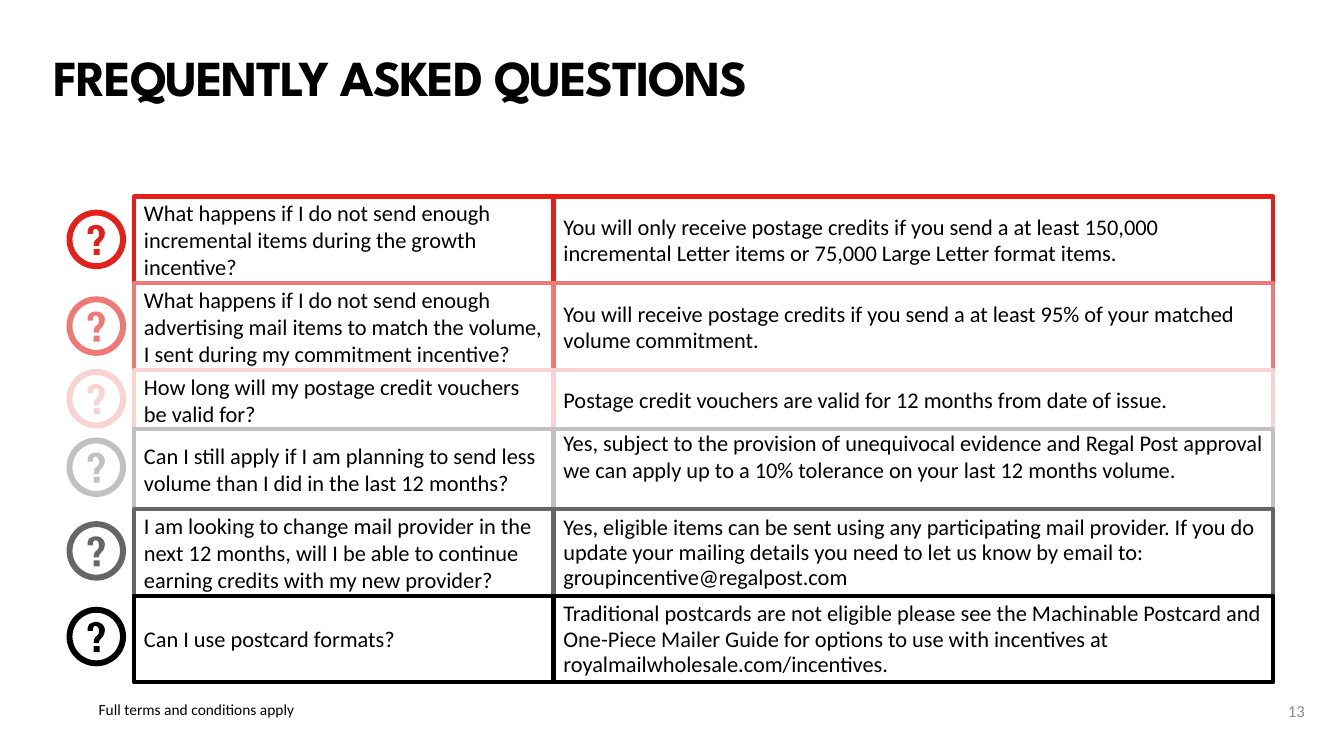
from dataclasses import dataclass

from pptx import Presentation
from pptx.dml.color import RGBColor
from pptx.enum.shapes import MSO_SHAPE as SHAPE
from pptx.enum.text import MSO_ANCHOR as ANCHOR, PP_ALIGN as ALIGN
from pptx.util import Inches, Pt


@dataclass(frozen=True)
class Theme:
    title_font: str = "League Spartan"
    body_font: str = "Calibri"
    title_size: int = 36
    body_size: int = 16
    number_size: int = 12
    footer_size: int = 11
    text: str = "000000"
    number: str = "8C8C8C"
    red: str = "E32019"
    coral: str = "EE7975"
    blush: str = "F9D3D1"
    silver: str = "C1C1C1"
    grey: str = "666666"
    black: str = "000000"


theme = Theme()


def write(sp, text, size, font=theme.body_font, color=theme.text, bold=False,
          spacing=None, align=ALIGN.LEFT, **frame):
    """Fill a shape with one styled paragraph; frame holds text frame settings."""
    tf = sp.text_frame
    for name, value in {"word_wrap": True, **frame}.items():
        setattr(tf, name, value)
    p = tf.paragraphs[0]
    p.alignment = align
    p.line_spacing = spacing
    r = p.add_run()
    r.text = text
    for name, value in {"name": font, "size": Pt(size), "bold": bold}.items():
        setattr(r.font, name, value)
    r.font.color.rgb = RGBColor.from_string(color)
    return r


def curve_points(start, segments, steps=6):
    """Turn cubic segments (two controls and an end) into points."""
    points = []
    for x1, y1, x2, y2, x3, y3 in segments:
        for t in (i / steps for i in range(1, steps + 1)):
            u = 1 - t
            points.append(tuple(
                u**3 * a + 3 * u * u * t * b + 3 * u * t * t * c + t**3 * d
                for a, b, c, d in zip(start, (x1, y1), (x2, y2), (x3, y3))))
        start = (x3, y3)
    return points


prs = Presentation()
prs.slide_width, prs.slide_height = Inches(13.33), Inches(7.5)
s = prs.slides.add_slide(prs.slide_layouts[6])

# Title, page number and footnote
no_margins = dict.fromkeys(
    ("margin_left", "margin_top", "margin_right", "margin_bottom"), 0)
title = s.shapes.add_textbox(Inches(0.53), Inches(0.45), Inches(11.01), Inches(0.52))
r = write(title, "FREQUENTLY ASKED QUESTIONS", theme.title_size, theme.title_font,
          bold=True, spacing=Pt(44), **no_margins)
r.font._element.set("spc", "-100")

number = s.shapes.add_textbox(Inches(12.63), Inches(6.85), Inches(0.41), Inches(0.4))
write(number, "13", theme.number_size, color=theme.number, align=ALIGN.RIGHT,
      vertical_anchor=ANCHOR.MIDDLE)

footnote = s.shapes.add_textbox(Inches(0.88), Inches(6.97), Inches(5.7), Inches(0.15))
write(footnote, "Full terms and conditions apply", theme.footer_size, spacing=0.9,
      margin_top=0, margin_bottom=0)

# Question mark outline, in hundredths of an inch from the icon's corner
hook_start = (27, 36)
inner_hook = [(27, 32, 28, 30, 30, 29), (31, 28, 32, 27, 32, 26),
              (32, 25, 32, 24, 32, 23), (32, 22, 32, 21, 31, 20),
              (31, 20, 30, 19, 29, 19), (28, 19, 26, 19, 26, 24)]
tip = [(21, 24), (21, 22)]
outer_hook = [(21, 20, 22, 18, 23, 17), (25, 16, 27, 15, 29, 15),
              (32, 15, 34, 16, 36, 18), (37, 19, 38, 21, 38, 23),
              (38, 31, 32, 31, 32, 36)]
hook = curve_points(hook_start, inner_hook) + tip + curve_points(tip[-1], outer_hook)

# Colour, row height, icon top, question, answer, answer line spacing
rows = [
    (theme.red, 0.86, 2.08,
     "What happens if I do not send enough incremental items during the growth "
     "incentive?",
     "You will only receive postage credits if you send a at least 150,000 "
     "incremental Letter items or 75,000 Large Letter format items.", Pt(19)),
    (theme.coral, 0.86, 2.94,
     "What happens if I do not send enough advertising mail items to match the "
     "volume, I sent during my commitment incentive?",
     "You will receive postage credits if you send a at least 95% of your matched "
     "volume commitment.", Pt(19)),
    (theme.blush, 0.59, 3.66,
     "How long will my postage credit vouchers be valid for?",
     "Postage credit vouchers are valid for 12 months from date of issue.", Pt(19)),
    (theme.silver, 0.79, 4.34,
     "Can I still apply if I am planning to send less volume than I did in the last "
     "12 months?",
     "Yes, subject to the provision of unequivocal evidence and Regal Post approval "
     "we can apply up to a 10% tolerance on your last 12 months volume.", None),
    (theme.grey, 0.86, 5.17,
     "I am looking to change mail provider in the next 12 months, will I be able to "
     "continue earning credits with my new provider?",
     "Yes, eligible items can be sent using any participating mail provider. If you "
     "do update your mailing details you need to let us know by email to: "
     "groupincentive@regalpost.com", Pt(18)),
    (theme.black, 0.86, 6.02,
     "Can I use postcard formats?",
     "Traditional postcards are not eligible please see the Machinable Postcard and "
     "One-Piece Mailer Guide for options to use with incentives at "
     "royalmailwholesale.com/incentives.", Pt(18)),
]
icon_left, icon_size = 0.66, 0.59
middle = {"vertical_anchor": ANCHOR.MIDDLE}
high = {"vertical_anchor": ANCHOR.TOP, "margin_top": 0}

row_top = 1.95
for color, height, icon_top, question, answer, spacing in rows:
    rgb = RGBColor.from_string(color)
    answer_frame = middle if spacing else high
    for left, width, text, leading, frame in (
            (1.33, 4.16, question, None, middle),
            (5.49, 7.14, answer, spacing, answer_frame)):
        sp = s.shapes.add_shape(SHAPE.RECTANGLE, Inches(left), Inches(row_top),
                                Inches(width), Inches(height))
        sp.shadow.inherit = False
        sp.fill.background()
        sp.line.color.rgb = rgb
        sp.line.width = Pt(3)
        write(sp, text, theme.body_size, spacing=leading, **frame)
    row_top += height

    icon = s.shapes.add_group_shape().shapes
    ring = icon.add_shape(SHAPE.DONUT, Inches(icon_left), Inches(icon_top),
                          Inches(icon_size), Inches(icon_size))
    ring.adjustments[0] = 0.1
    dot = icon.add_shape(SHAPE.RECTANGLE, Inches(icon_left + 0.27),
                         Inches(icon_top + 0.39), Inches(0.06), Inches(0.06))
    outline = [(Inches(icon_left + x / 100), Inches(icon_top + y / 100))
               for x, y in [hook_start] + hook]
    builder = icon.build_freeform(*outline[0])
    builder.add_line_segments(outline[1:], close=True)
    for sp in (ring, dot, builder.convert_to_shape()):
        sp.shadow.inherit = False
        sp.fill.solid()
        sp.fill.fore_color.rgb = rgb
        sp.line.fill.background()

prs.save("out.pptx")
